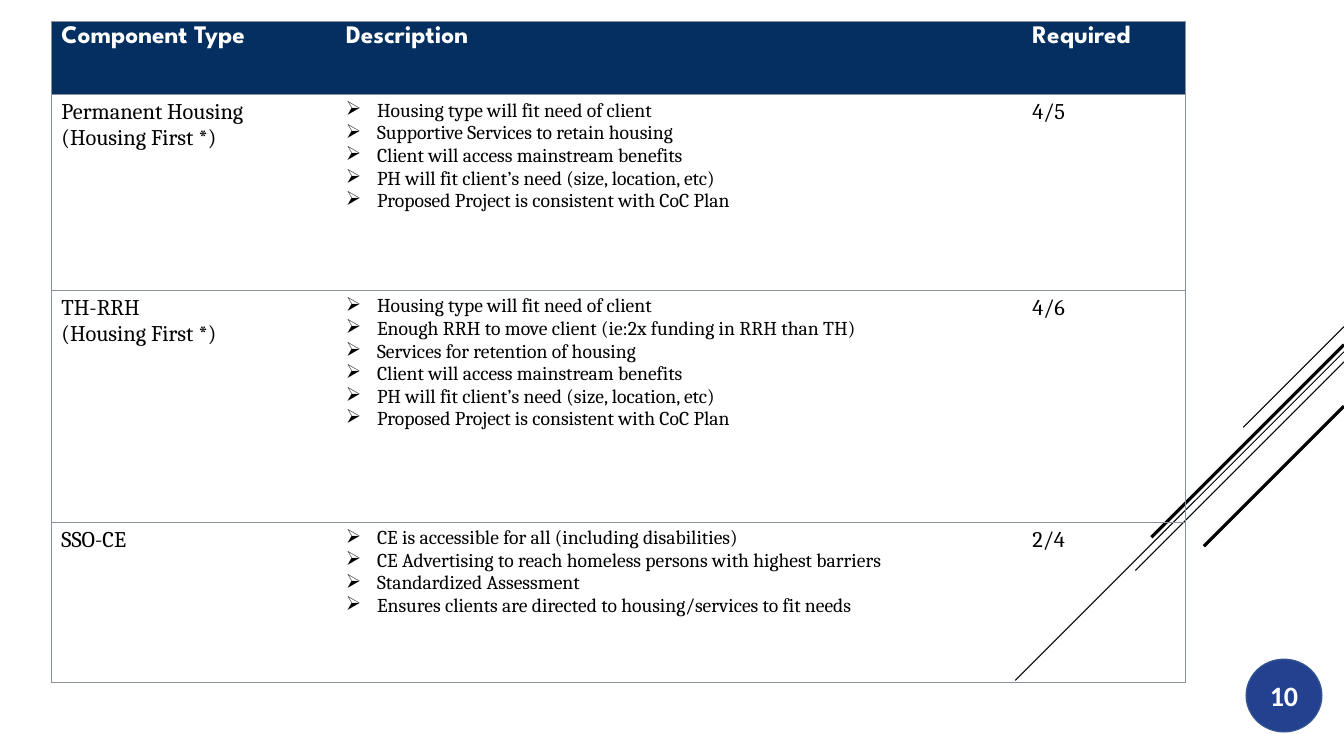
from dataclasses import dataclass
from typing import Any

from lxml.etree import SubElement
from pptx import Presentation
from pptx.dml.color import RGBColor
from pptx.enum.shapes import MSO_CONNECTOR, MSO_SHAPE
from pptx.enum.text import MSO_ANCHOR, PP_ALIGN
from pptx.oxml.ns import qn
from pptx.util import Inches, Pt


@dataclass(frozen=True)
class Theme:
    navy: str = "052F61"
    blue: str = "244190"
    rim: str = "31538F"
    rule: str = "89919C"
    ink: str = "000000"
    white: str = "FFFFFF"
    head: float = 18
    body: float = 16
    list: float = 14
    page: float = 20


@dataclass(frozen=True)
class Stripe:
    """A 45 degree line falling left from the slide's right edge."""
    top: float
    drop: float
    width: float


@dataclass(frozen=True)
class Entry:
    kind: str
    points: list[str]
    score: str
    height: float


@dataclass(frozen=True)
class Font:
    name: str
    size: float
    color: str
    bold: bool = False


THEME = Theme()
WIDE, HIGH = 13.33, 7.5
HEAD = Font("League Spartan", THEME.head, THEME.white, True)
BODY = Font("Cambria", THEME.body, THEME.ink)
LIST = Font("Cambria", THEME.list, THEME.ink)
PAGE = Font("Calibri", THEME.page, THEME.white, True)

STRIPES = [
    Stripe(3.24, 1, 0.75),
    Stripe(3.49, 3.26, 0.75),
    Stripe(3.59, 2.07, 0.75),
    Stripe(3.42, 1.91, 2.25),
    Stripe(4.03, 1.39, 2.25),
]
TITLES = ["Component Type", "Description", "Required"]
COLS = [2.82, 6.81, 1.62]
TOP_ROW = 0.73
FIT = "Housing type will fit need of client"
SHARED = [
    "Client will access mainstream benefits",
    "PH will fit client’s need (size, location, etc)",
    "Proposed Project is consistent with CoC Plan",
]
ENTRIES = [
    Entry("Permanent Housing\n(Housing First *)",
          [FIT, "Supportive Services to retain housing", *SHARED], "4/5", 1.94),
    Entry("TH-RRH\n(Housing First *)",
          [FIT, "Enough RRH to move client (ie:2x funding in RRH than TH)",
           "Services for retention of housing", *SHARED], "4/6", 2.3),
    Entry("SSO-CE",
          ["CE is accessible for all (including disabilities)",
           "CE Advertising to reach homeless persons with highest barriers",
           "Standardized Assessment",
           "Ensures clients are directed to housing/services to fit needs"],
          "2/4", 1.59),
]


def rgb(code: str) -> RGBColor:
    return RGBColor.from_string(code)


def write(frame: Any, text: str, font: Font) -> None:
    frame.text = text
    for para in frame.paragraphs:
        for run in para.runs:
            run.font.name = font.name
            run.font.size = Pt(font.size)
            run.font.bold = font.bold
            run.font.color.rgb = rgb(font.color)


def bullet(para: Any) -> None:
    props = para._p.get_or_add_pPr()
    props.set("marL", str(Inches(0.31)))
    props.set("indent", str(-Inches(0.31)))
    SubElement(props, qn("a:buChar")).set("char", "➢")


def border(cell: Any, sides: str) -> None:
    """Rule the named sides and clear the others."""
    props = cell._tc.get_or_add_tcPr()
    for side in "LRTB":
        line = SubElement(props, qn(f"a:ln{side}"))
        line.set("w", str(Pt(0.75)))
        if side in sides:
            fill = SubElement(line, qn("a:solidFill"))
            color = SubElement(fill, qn("a:srgbClr"))
            color.set("val", THEME.rule)
            SubElement(color, qn("a:alpha")).set("val", "60000")
        else:
            SubElement(line, qn("a:noFill"))


def draw_stripe(shapes: Any, stripe: Stripe) -> None:
    line = shapes.add_connector(
        MSO_CONNECTOR.STRAIGHT, Inches(WIDE), Inches(stripe.top),
        Inches(WIDE - stripe.drop), Inches(stripe.top + stripe.drop))
    line.line.color.rgb = rgb(THEME.ink)
    line.line.width = Pt(stripe.width)
    SubElement(line._element.spPr, qn("a:effectLst"))


def draw_badge(shapes: Any, text: str) -> None:
    disc = shapes.add_shape(MSO_SHAPE.OVAL, Inches(12.36), Inches(6.54),
                            Inches(0.75), Inches(0.72))
    disc.shadow.inherit = False
    disc.fill.solid()
    disc.fill.fore_color.rgb = rgb(THEME.blue)
    disc.line.color.rgb = rgb(THEME.rim)
    disc.line.width = Pt(1)
    write(disc.text_frame, text, PAGE)
    disc.text_frame.vertical_anchor = MSO_ANCHOR.MIDDLE
    disc.text_frame.paragraphs[0].alignment = PP_ALIGN.CENTER


def draw_table(shapes: Any, entries: list[Entry]) -> None:
    heights = [TOP_ROW] + [entry.height for entry in entries]
    table = shapes.add_table(
        len(heights), len(COLS), Inches(0.51), Inches(0.21),
        Inches(sum(COLS)), Inches(sum(heights))).table
    table.horz_banding = False
    for col, width in zip(table.columns, COLS):
        col.width = Inches(width)
    for row, height in zip(table.rows, heights):
        row.height = Inches(height)

    # Wording
    for col, title in enumerate(TITLES):
        write(table.cell(0, col).text_frame, title, HEAD)
    for row, entry in enumerate(entries, 1):
        write(table.cell(row, 0).text_frame, entry.kind, BODY)
        notes = table.cell(row, 1).text_frame
        write(notes, "\n".join(entry.points), LIST)
        for para in notes.paragraphs:
            bullet(para)
        write(table.cell(row, 2).text_frame, entry.score, BODY)

    # Rules and fills: open body cells let the stripes show through
    for row in range(len(heights)):
        for col, ends in enumerate(["L", "", "R"]):
            cell = table.cell(row, col)
            border(cell, "TB" + ends)
            if row == 0:
                cell.fill.solid()
                cell.fill.fore_color.rgb = rgb(THEME.navy)
            else:
                cell.fill.background()


def main() -> None:
    deck = Presentation()
    deck.slide_width, deck.slide_height = Inches(WIDE), Inches(HIGH)
    slide = deck.slides.add_slide(deck.slide_layouts[6])

    # Diagonal stripes behind everything
    group = slide.shapes.add_group_shape()
    for stripe in STRIPES:
        draw_stripe(group.shapes, stripe)

    # Page number and component table
    draw_badge(slide.shapes, "10")
    draw_table(slide.shapes, ENTRIES)
    deck.save("out.pptx")


if __name__ == "__main__":
    main()
